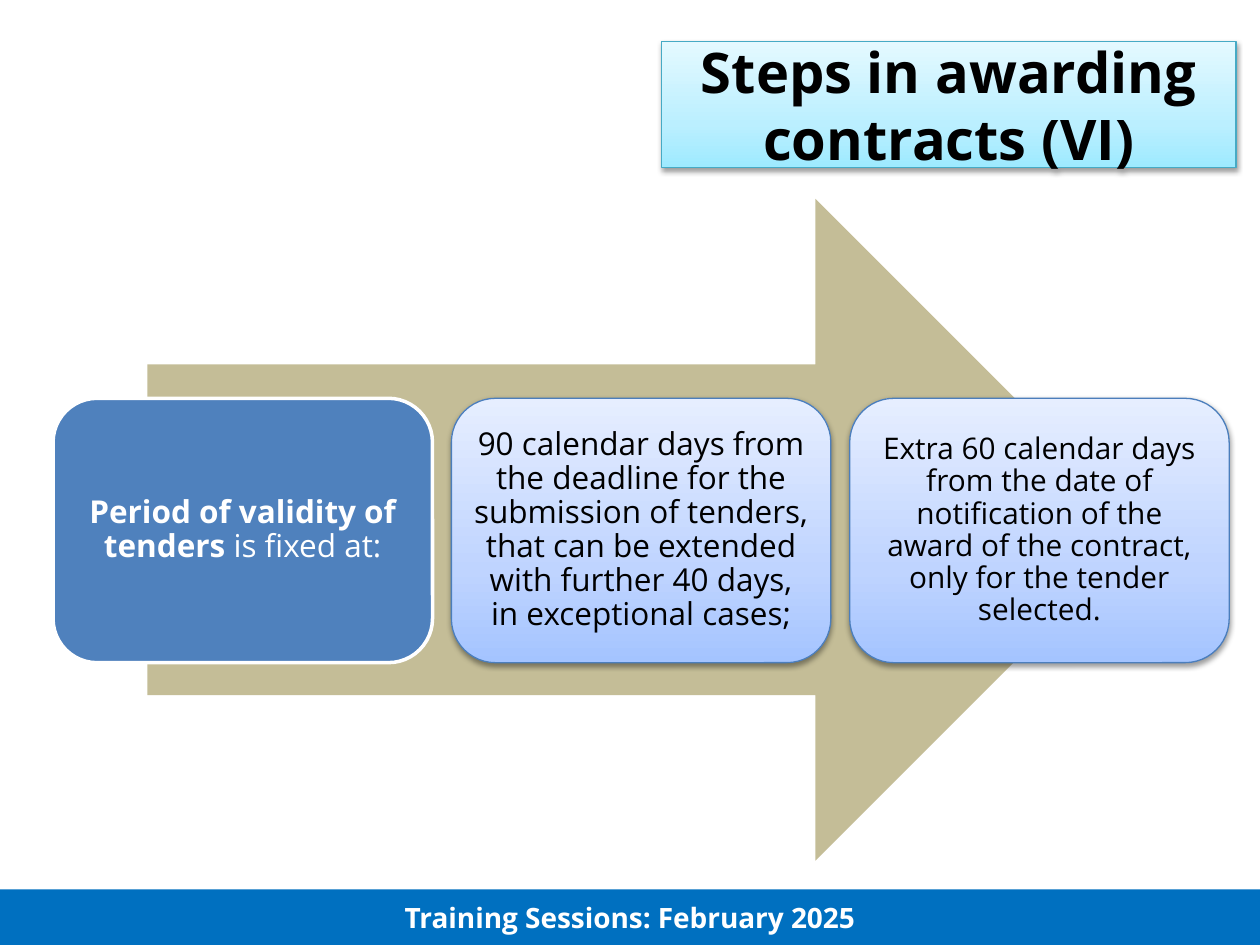
from dataclasses import dataclass

from lxml import etree
from pptx import Presentation
from pptx.dml.color import RGBColor
from pptx.enum import shapes, text
from pptx.oxml.ns import qn
from pptx.util import Cm, Pt

FONT = "Open Sans"
COLOURS = {
    "footer": "0070C0", "arrow": "C4BD97", "lead": "4F81BD", "card_line": "4B7EBC",
    "title_line": "46AAC5", "white": "FFFFFF", "black": "000000",
}
# Gradient stops run from the bottom edge to the top: (percent, colour)
CARD_STOPS = [(0, "A4C4FF"), (35, "BFD4FF"), (100, "E6EEFF")]
TITLE_STOPS = [(0, "9EEAFF"), (35, "BBEFFF"), (100, "E4F9FF")]
CARD_LEFT, CARD_TOP, CARD_WIDTH, CARD_HEIGHT, CARD_PITCH = 1.07, 8.03, 7.65, 5.33, 8.03


@dataclass
class Card:
    runs: list[tuple[str, bool]]
    size: int = 18
    lead: bool = False


CARDS = [
    Card([("Period of validity of tenders", True), (" is fixed at:", False)], lead=True),
    Card([("90 calendar days from the deadline for the submission of tenders, that can be "
           "extended with further 40 days, in exceptional cases;", False)]),
    Card([("Extra 60 calendar days from the date of notification of the award of the contract, "
           "only for the tender selected.", False)], size=17),
]


def rgb(name: str) -> RGBColor:
    return RGBColor.from_string(COLOURS[name])


def add_block(slide, kind, left: float, top: float, width: float, height: float):
    """Add a preset shape, in centimetres, with no line and no shadow."""
    shape = slide.shapes.add_shape(kind, Cm(left), Cm(top), Cm(width), Cm(height))
    shape.shadow.inherit = False
    shape.line.fill.background()
    return shape


def fill_solid(shape, colour: str) -> None:
    shape.fill.solid()
    shape.fill.fore_color.rgb = rgb(colour)


def set_line(shape, colour: str, width: float) -> None:
    shape.line.color.rgb = rgb(colour)
    shape.line.width = Pt(width)


def add_gradient_and_shadow(shape, stops: list[tuple[int, str]]) -> None:
    shape.fill.gradient()
    shape.fill.gradient_angle = 90
    properties = shape._element.spPr
    stop_list = properties.find(f"{qn('a:gradFill')}/{qn('a:gsLst')}")
    for old_stop in list(stop_list):
        stop_list.remove(old_stop)
    for percent, colour in stops:
        stop = etree.SubElement(stop_list, qn("a:gs"), pos=str(percent * 1000))
        etree.SubElement(stop, qn("a:srgbClr"), val=colour)
    shadow = etree.SubElement(
        properties.find(qn("a:effectLst")), qn("a:outerShdw"),
        blurRad=str(Pt(3.1)), dist=str(Pt(1.6)), dir="5400000", rotWithShape="0")
    shade = etree.SubElement(shadow, qn("a:srgbClr"), val=COLOURS["black"])
    etree.SubElement(shade, qn("a:alpha"), val="38000")


def write(shape, runs: list[tuple[str, bool]], size: int, colour: str):
    """Write centred (text, bold) runs and return their paragraph."""
    frame = shape.text_frame
    frame.word_wrap = True
    frame.vertical_anchor = text.MSO_ANCHOR.MIDDLE
    paragraph = frame.paragraphs[0]
    paragraph.alignment = text.PP_ALIGN.CENTER
    paragraph.font.name = FONT
    paragraph.font.size = Pt(size)
    paragraph.font.color.rgb = rgb(colour)
    for words, bold in runs:
        run = paragraph.add_run()
        run.text = words
        run.font.name = FONT
        run.font.size = Pt(size)
        run.font.color.rgb = rgb(colour)
        run.font.bold = bold
    return paragraph


def add_card(slide, card: Card, left: float) -> None:
    shape = add_block(slide, shapes.MSO_SHAPE.ROUNDED_RECTANGLE,
                      left, CARD_TOP, CARD_WIDTH, CARD_HEIGHT)
    if card.lead:
        fill_solid(shape, "lead")
        set_line(shape, "white", 2)
    else:
        add_gradient_and_shadow(shape, CARD_STOPS)
        set_line(shape, "card_line", 0.75)
    frame = shape.text_frame
    frame.margin_left = frame.margin_right = frame.margin_top = frame.margin_bottom = Cm(0.18)
    paragraph = write(shape, card.runs, card.size, "white" if card.lead else "black")
    paragraph.line_spacing = 0.9


def main() -> None:
    presentation = Presentation()
    presentation.slide_width, presentation.slide_height = Cm(25.4), Cm(19.05)
    slide = presentation.slides.add_slide(presentation.slide_layouts[6])

    footer = add_block(slide, shapes.MSO_SHAPE.RECTANGLE, 0, 17.93, 25.4, 1.12)
    fill_solid(footer, "footer")
    write(footer, [("Training Sessions: February 2025", True)], 16, "white")

    arrow = add_block(slide, shapes.MSO_SHAPE.RIGHT_ARROW, 2.97, 4.01, 20.14, 13.34)
    fill_solid(arrow, "arrow")

    for index, card in enumerate(CARDS):
        add_card(slide, card, CARD_LEFT + index * CARD_PITCH)

    title = add_block(slide, shapes.MSO_SHAPE.RECTANGLE, 13.34, 0.84, 11.58, 2.54)
    add_gradient_and_shadow(title, TITLE_STOPS)
    set_line(title, "title_line", 0.75)
    write(title, [("Steps in awarding contracts (VI)", True)], 32, "black")

    presentation.save("out.pptx")


if __name__ == "__main__":
    main()
